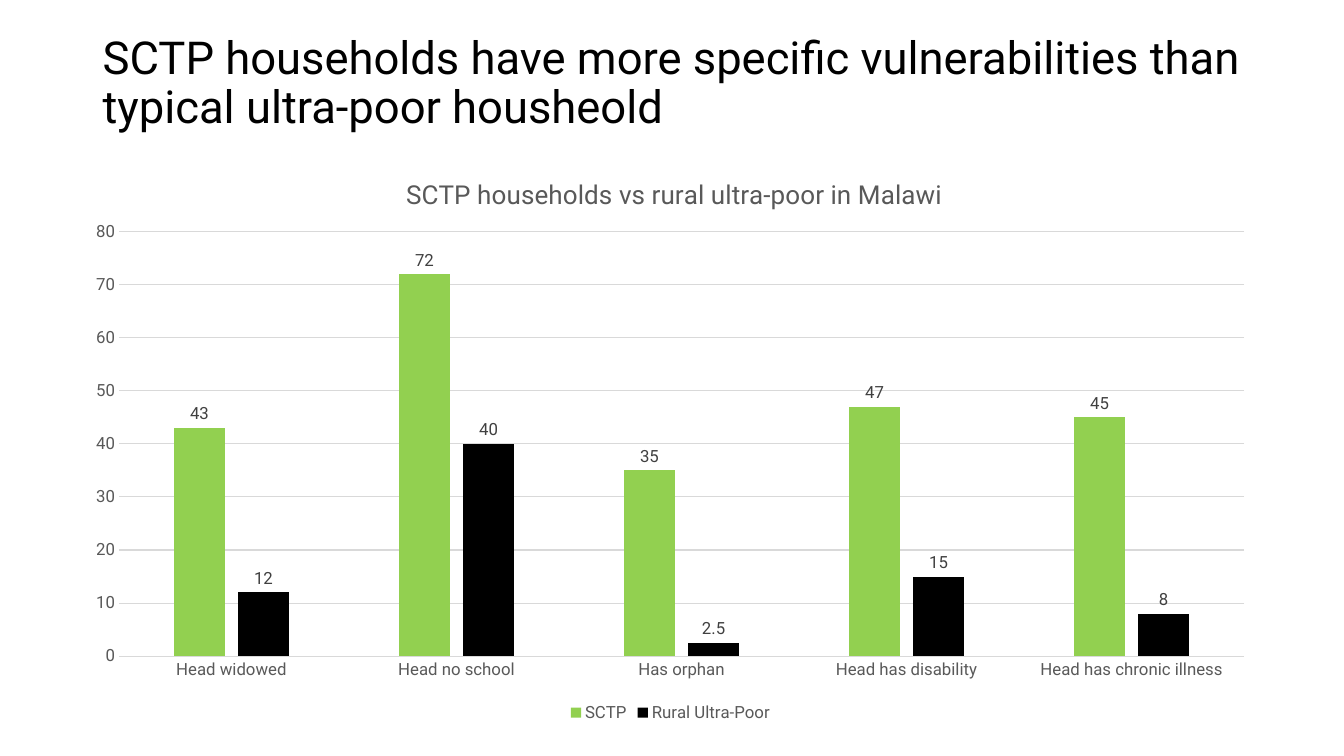
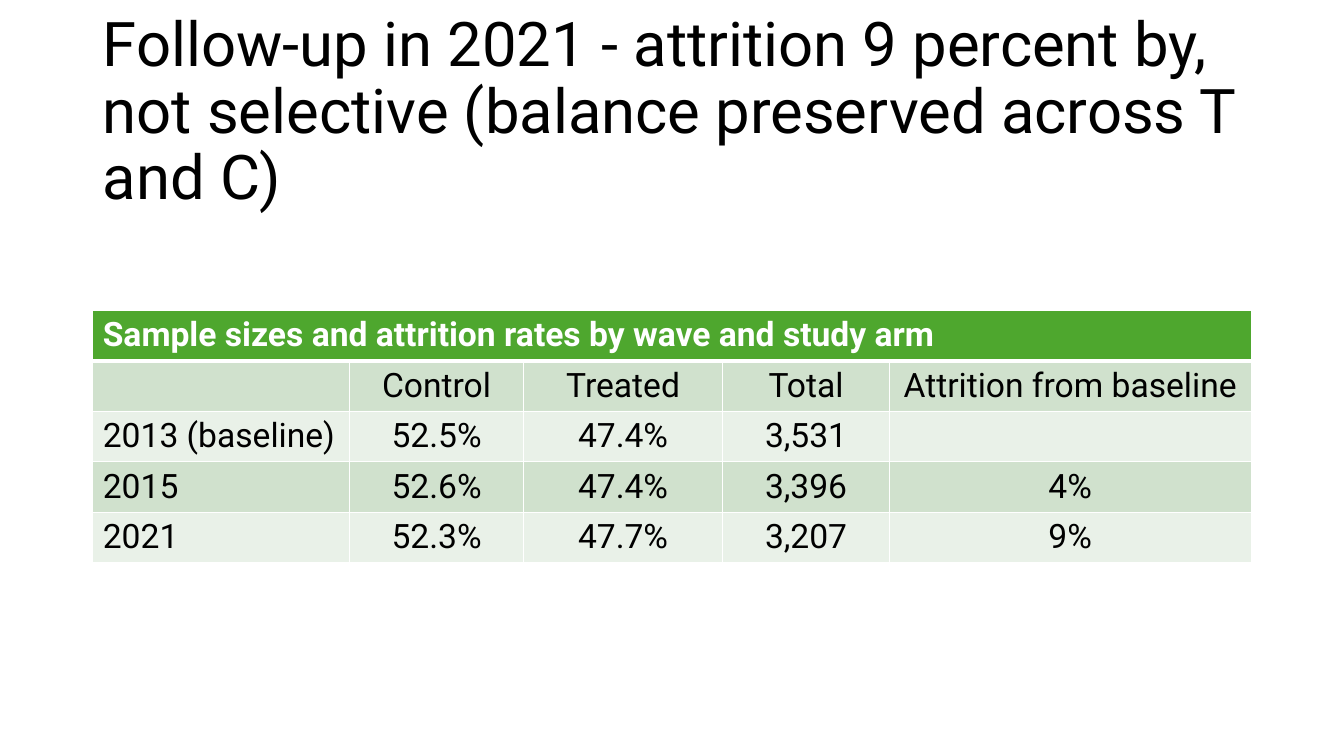
from dataclasses import dataclass

from lxml import etree
from pptx import Presentation
from pptx import util as u
from pptx.chart import data
from pptx.dml import color
from pptx.enum import chart as ch, text as tx
from pptx.oxml import ns


@dataclass(frozen=True)
class Theme:
    """Hold the colours, type sizes and font."""
    font: str = "Roboto"
    black: str = "000000"
    white: str = "FFFFFF"
    gray: str = "595959"
    dark: str = "404040"
    rule: str = "D9D9D9"
    lime: str = "92D050"
    green: str = "4EA72E"
    bands: tuple = ("D0E1CD", "E9F1E8")
    head: float = 44
    small: float = 32.4
    cell: float = 24
    sub: float = 18.6
    label: float = 12


T = Theme()


def rgb(tint):
    """Turn a hex string into a colour."""
    return color.RGBColor.from_string(tint)


def style(font, size, tint, bold=False):
    """Set the face, size, colour and weight of a font."""
    font.name, font.size, font.bold = T.font, u.Pt(size), bold
    font.color.rgb = rgb(tint)


def write(frame, words, size=T.cell, tint=T.black, bold=False, align=None, space=None):
    """Put one formatted paragraph in a text frame."""
    para = frame.paragraphs[0]
    para.alignment, para.line_spacing = align, space
    run = para.add_run()
    run.text = words
    style(run.font, size, tint, bold)


def place(node, index, **parts):
    """Give a chart part a fixed layout in fractions of the chart."""
    for old in node.findall(ns.qn("c:layout")):
        node.remove(old)
    layout = etree.Element(ns.qn("c:layout"))
    manual = etree.SubElement(layout, ns.qn("c:manualLayout"))
    if "w" in parts:
        etree.SubElement(manual, ns.qn("c:layoutTarget")).set("val", "inner")
    for side in "xy":
        etree.SubElement(manual, ns.qn(f"c:{side}Mode")).set("val", "edge")
    for key, val in parts.items():
        etree.SubElement(manual, ns.qn(f"c:{key}")).set("val", f"{val:.4f}")
    node.insert(index, layout)


def edge(cell, **widths):
    """Draw white borders of the given point widths on a cell."""
    props = cell._tc.get_or_add_tcPr()
    for side in "LRTB":
        line = etree.SubElement(props, ns.qn(f"a:ln{side}"))
        line.set("w", str(u.Pt(widths.get(side, 1))))
        fill = etree.SubElement(line, ns.qn("a:solidFill"))
        etree.SubElement(fill, ns.qn("a:srgbClr")).set("val", T.white)


class Deck:
    """Build slides in one shared style."""

    def __init__(self):
        """Start an empty wide deck."""
        self.prs = Presentation()
        self.prs.slide_width, self.prs.slide_height = u.Inches(13.33), u.Inches(7.5)
        self.slide = None

    def page(self, words, top, high, size=T.head):
        """Add a slide with its title."""
        self.slide = self.prs.slides.add_slide(self.prs.slide_layouts[6])
        box = self.slide.shapes.add_textbox(
            u.Inches(0.92), u.Inches(top), u.Inches(11.5), u.Inches(high))
        frame = box.text_frame
        frame.word_wrap, frame.vertical_anchor = True, tx.MSO_ANCHOR.MIDDLE
        write(frame, words, size=size, space=0.9)

    def bars(self, name, cats, rows):
        """Add a clustered column chart from (name, colour, values) rows."""
        wide, high = 11.86, 5.75
        feed = data.CategoryChartData()
        feed.categories = cats
        for label, _, vals in rows:
            feed.add_series(label, vals)
        chart = self.slide.shapes.add_chart(
            ch.XL_CHART_TYPE.COLUMN_CLUSTERED, u.Inches(0.72), u.Inches(1.46),
            u.Inches(wide), u.Inches(high), feed).chart
        style(chart.font, T.label, T.gray)
        write(chart.chart_title.text_frame, name, size=T.sub, tint=T.gray)
        place(chart.chart_title.element, 1, x=3.26 / wide, y=0.25 / high)
        area = chart.element.find(".//" + ns.qn("c:plotArea"))
        place(area, 0, x=0.46 / wide, y=0.84 / high, w=11.16 / wide, h=4.21 / high)
        chart.has_legend = True
        chart.legend.position = ch.XL_LEGEND_POSITION.BOTTOM
        chart.legend.include_in_layout = False
        style(chart.legend.font, T.label, T.gray)
        self.axes(chart)
        plot = chart.plots[0]
        plot.gap_width, plot.overlap, plot.vary_by_categories = 219, -27, False
        for bar, (_, tint, _) in zip(plot.series, rows):
            bar.format.fill.solid()
            bar.format.fill.fore_color.rgb = rgb(tint)
            bar.invert_if_negative = False
            tags = bar.data_labels
            tags.show_value, tags.position = True, ch.XL_LABEL_POSITION.OUTSIDE_END
            style(tags.font, T.label, T.dark)

    def axes(self, chart):
        """Style both axes and the grid of a chart."""
        cat, val = chart.category_axis, chart.value_axis
        for axis in (cat, val):
            axis.major_tick_mark = axis.minor_tick_mark = ch.XL_TICK_MARK.NONE
            style(axis.tick_labels.font, T.label, T.gray)
        val.minimum_scale, val.maximum_scale, val.major_unit = 0, 80, 10
        val.format.line.fill.background()
        for line in (cat.format.line, val.major_gridlines.format.line):
            line.color.rgb, line.width = rgb(T.rule), u.Pt(0.75)

    def table(self, name, cols, rows):
        """Add a banded table under one merged heading."""
        grid = self.slide.shapes.add_table(
            len(rows) + 1, len(cols), u.Inches(0.92), u.Inches(3.08),
            u.Inches(sum(cols)), u.Inches(2.45)).table
        for col, wide in zip(grid.columns, cols):
            col.width = u.Inches(wide)
        for j in range(len(cols)):
            self.cell(grid.cell(0, j), T.green, B=3)
        grid.cell(0, 0).merge(grid.cell(0, len(cols) - 1))
        write(grid.cell(0, 0).text_frame, name, tint=T.white, bold=True)
        for i, row in enumerate(rows, 1):
            for j, words in enumerate(row):
                cell = grid.cell(i, j)
                self.cell(cell, T.bands[(i - 1) % 2], T=3 if i == 1 else 1)
                if words:
                    write(cell.text_frame, words, align=tx.PP_ALIGN.CENTER if j else None)

    def cell(self, cell, tint, **widths):
        """Give a cell its borders and fill."""
        edge(cell, **widths)
        cell.fill.solid()
        cell.fill.fore_color.rgb = rgb(tint)


def main():
    """Build and save the deck."""
    deck = Deck()
    deck.page("SCTP households have more specific vulnerabilities than "
              "typical ultra-poor housheold", 0.29, 1.09, size=T.small)
    deck.bars(
        "SCTP households vs rural ultra-poor in Malawi",
        ["Head widowed", "Head no school", "Has orphan", "Head has disability",
         "Head has chronic illness"],
        [("SCTP", T.lime, (43, 72, 35, 47, 45)),
         ("Rural Ultra-Poor", T.black, (12, 40, 2.5, 15, 8))])
    deck.page("Follow-up in 2021 - attrition 9 percent by, not selective "
              "(balance preserved across T and C)", 0.4, 1.45)
    deck.table(
        "Sample sizes and attrition rates by wave and study arm",
        (2.55, 1.72, 1.98, 1.65, 3.59),
        [("", "Control", "Treated", "Total", "Attrition from baseline"),
         ("2013 (baseline)", "52.5%", "47.4%", "3,531", ""),
         ("2015", "52.6%", "47.4%", "3,396", "4%"),
         ("2021", "52.3%", "47.7%", "3,207", "9%")])
    deck.prs.save("out.pptx")


if __name__ == "__main__":
    main()
